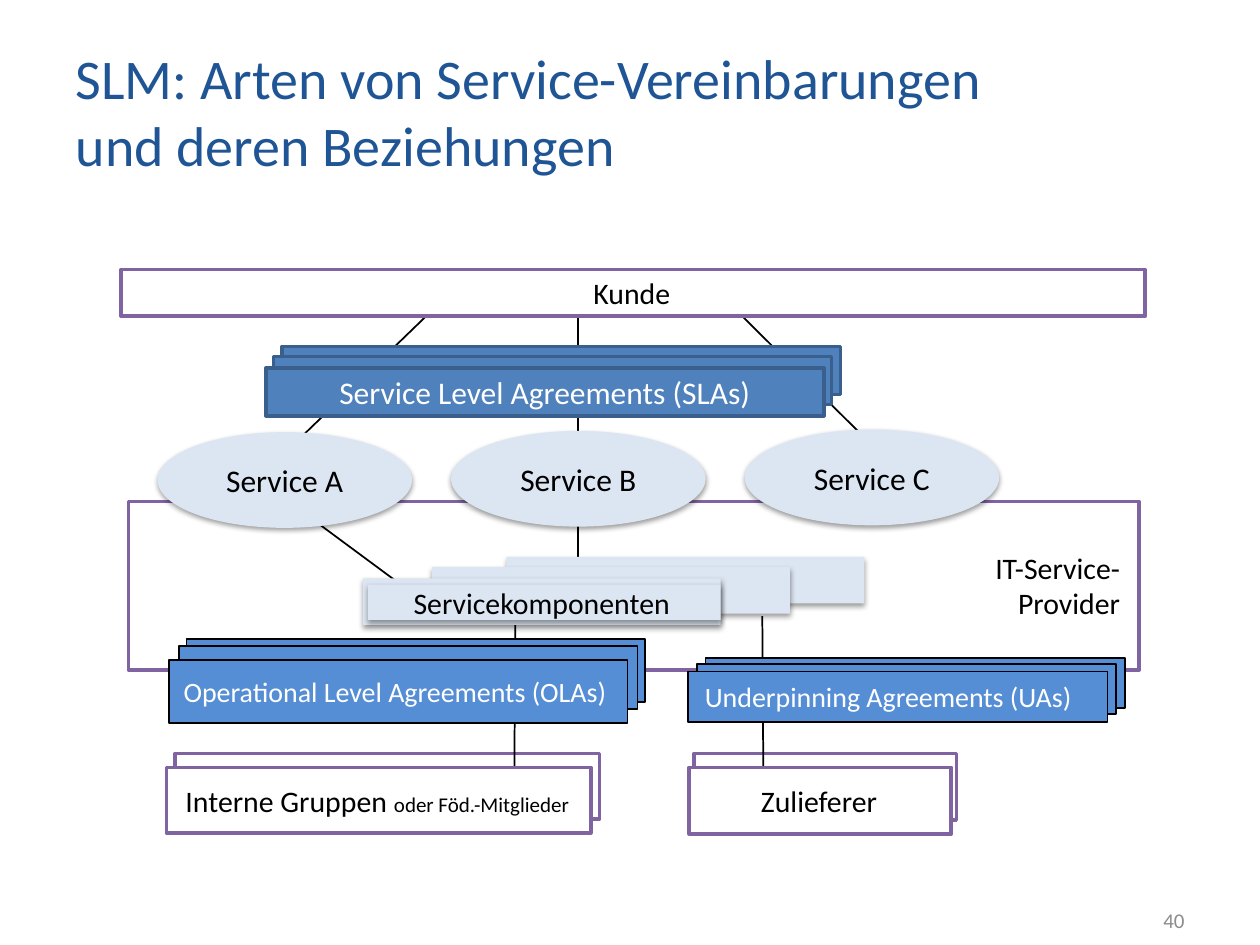
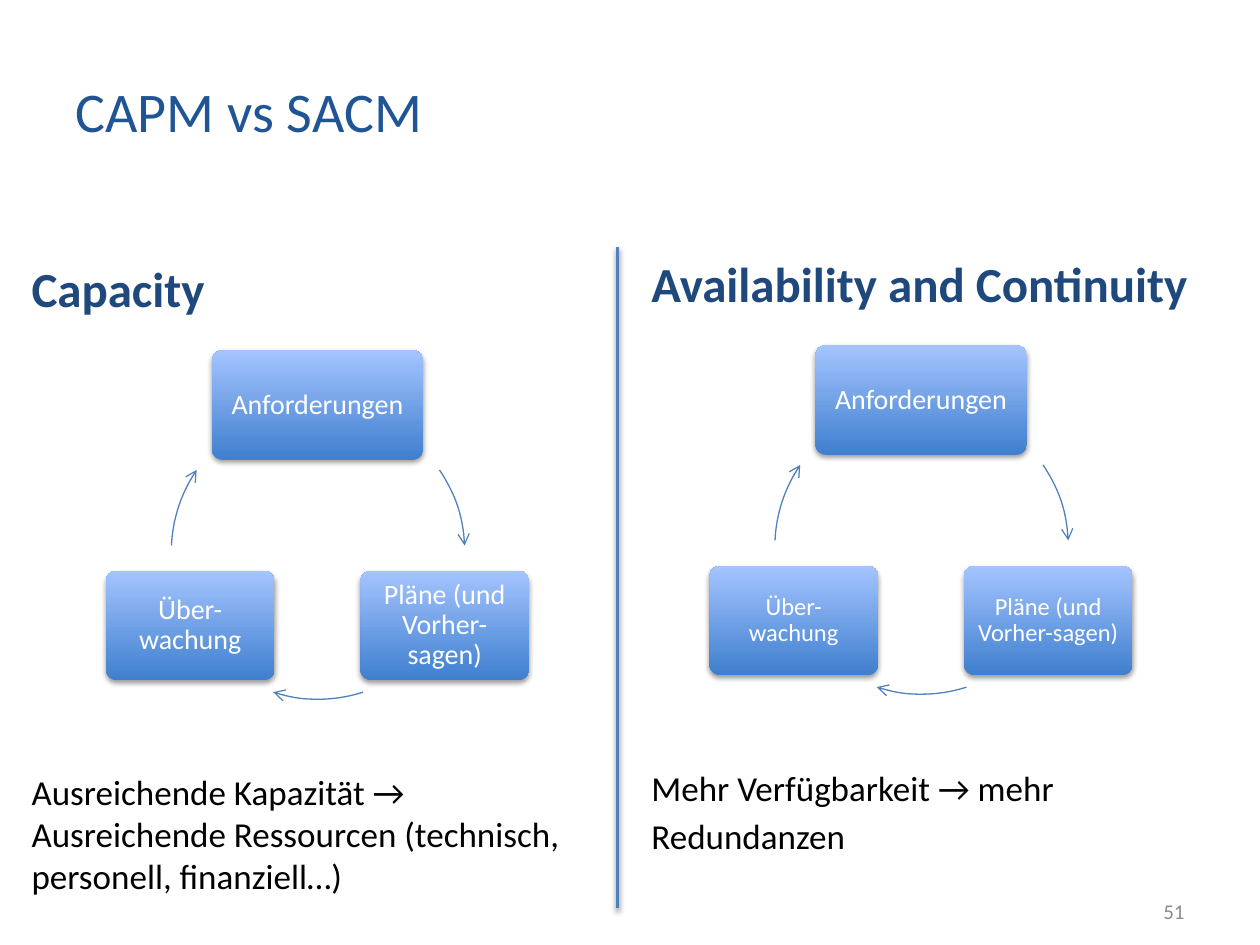
from dataclasses import dataclass, replace

from lxml import etree
from pptx import Presentation
from pptx.dml.color import RGBColor
from pptx.enum import shapes, text
from pptx.oxml.ns import qn
from pptx.util import Inches, Pt

FONT = "Calibri"
BLACK, WHITE, GREY = "000000", "FFFFFF", "8C8C8C"
TITLE_BLUE, HEADING_BLUE, BLUE = "205595", "1F497D", "4F81BD"
ALIGN, ANCHOR, SHAPE = text.PP_ALIGN, text.MSO_ANCHOR, shapes.MSO_SHAPE


@dataclass(frozen=True)
class Style:
    fill: str
    line: str = ""
    line_width: float = 2
    ink: str = BLACK
    shadow: bool = False


PARTY = Style(WHITE, "8064A2")
SLA = Style(BLUE, "3A5F8C", ink=WHITE)
AGREEMENT = Style("558ED5", BLACK, 1, ink=WHITE)
SERVICE = Style("DCE6F2", shadow=True)


@dataclass(frozen=True)
class Card:
    left: float
    top: float
    width: float
    height: float
    style: Style
    label: str = ""
    size: float = 17
    note: str = ""
    right_inset: float = 0.02
    kind: SHAPE = SHAPE.RECTANGLE


@dataclass(frozen=True)
class Cycle:
    left: float
    top: float
    step_size: float


@dataclass(frozen=True)
class Column:
    left: float
    top: float
    width: float
    height: float
    heading: str
    statement: str
    gap: float
    line_spacing: float


def colour(value: str) -> RGBColor:
    return RGBColor.from_string(value)


def place(shape, left: float, top: float, width: float, height: float) -> None:
    shape.left, shape.top = Inches(left), Inches(top)
    shape.width, shape.height = Inches(width), Inches(height)


def set_font(font, size: float, ink: str, bold: bool = False) -> None:
    font.name, font.size, font.bold = FONT, Pt(size), bold
    font.color.rgb = colour(ink)


def set_frame(frame, anchor, left: float, top: float, right: float, bottom: float) -> None:
    frame.word_wrap = True
    frame.auto_size = text.MSO_AUTO_SIZE.NONE
    frame.vertical_anchor = anchor
    frame.margin_left, frame.margin_top = Inches(left), Inches(top)
    frame.margin_right, frame.margin_bottom = Inches(right), Inches(bottom)


def set_effects(shape, shadow: bool = False) -> None:
    """Replace the theme shadow by a soft one below, or by none; call after fill and line."""
    effects = etree.SubElement(shape._element.spPr, qn("a:effectLst"))
    if shadow:
        outer = etree.SubElement(effects, qn("a:outerShdw"), blurRad=str(Pt(3.1)),
                                 dist=str(Pt(1.6)), dir="5400000", rotWithShape="0")
        ink = etree.SubElement(outer, qn("a:srgbClr"), val=BLACK)
        etree.SubElement(ink, qn("a:alpha"), val="38000")


def add_label(page, words: str, left: float, top: float, width: float, height: float,
              size: float, ink: str, inset: float) -> None:
    """Add right-aligned text without a frame."""
    box = page.shapes.add_textbox(Inches(left), Inches(top), Inches(width), Inches(height))
    set_frame(box.text_frame, ANCHOR.MIDDLE, inset, 0, inset, 0)
    para = box.text_frame.paragraphs[0]
    para.text, para.alignment = words, ALIGN.RIGHT
    set_font(para.font, size, ink)


def add_page(deck, layout: int, title: str, number: str, number_top: float):
    page = deck.slides.add_slide(deck.slide_layouts[layout])
    heading = page.shapes.title
    place(heading, 0.5, 0.3, 7.72, 1.15)
    set_frame(heading.text_frame, ANCHOR.MIDDLE, 0.1, 0.05, 0.1, 0.05)
    para = heading.text_frame.paragraphs[0]
    para.text, para.alignment = title, ALIGN.LEFT
    set_font(para.font, 32, TITLE_BLUE)
    add_label(page, number, 7.17, number_top, 2.33, 0.4, 12, GREY, 0.1)
    return page


def add_line(page, start: tuple, end: tuple, ink: str = BLACK, width: float = 1,
             shadow: bool = False) -> None:
    line = page.shapes.add_connector(shapes.MSO_CONNECTOR.STRAIGHT,
                                     *(Inches(value) for value in start + end))
    line.line.color.rgb, line.line.width = colour(ink), Pt(width)
    set_effects(line, shadow)


def add_card(page, card: Card) -> None:
    box = page.shapes.add_shape(card.kind, Inches(card.left), Inches(card.top),
                                Inches(card.width), Inches(card.height))
    style = card.style
    box.fill.solid()
    box.fill.fore_color.rgb = colour(style.fill)
    if style.line:
        box.line.color.rgb, box.line.width = colour(style.line), Pt(style.line_width)
    else:
        box.line.fill.background()
    set_effects(box, style.shadow)
    if card.label:
        set_frame(box.text_frame, ANCHOR.MIDDLE, 0, 0, card.right_inset, 0)
        para = box.text_frame.paragraphs[0]
        para.text, para.alignment = card.label, ALIGN.CENTER
        set_font(para.font, card.size, style.ink)
        if card.note:
            span = para.add_run()
            span.text, span.font.size = card.note, Pt(12)


def stack(front: Card, *behind: tuple) -> list[Card]:
    """Return blank cards at the places behind, then the front card."""
    blank = replace(front, label="", note="")
    return [replace(blank, left=left, top=top) for left, top in behind] + [front]


def service(name: str, left: float, top: float) -> Card:
    return Card(left, top, 2.02, 0.76, SERVICE, f"Service {name}", 18, right_inset=0,
                kind=SHAPE.OVAL)


def build_agreements(deck) -> None:
    page = add_page(deck, 5, "SLM: Arten von Service-Vereinbarungen und deren Beziehungen",
                    "40", 7.1)
    suppliers = stack(Card(5.47, 6.09, 2.08, 0.53, PARTY, "Zulieferer"), (5.51, 5.98))
    groups = stack(Card(1.32, 6.09, 3.37, 0.52, PARTY, "Interne Gruppen ",
                        note="oder Föd.-Mitglieder"), (1.39, 5.98))
    provider = Card(1.02, 3.98, 8.02, 1.34, PARTY)
    slas = stack(Card(2.11, 2.92, 4.43, 0.38, SLA, "Service Level Agreements (SLAs)", 18,
                      right_inset=0), (2.24, 2.75), (2.17, 2.83))
    olas = stack(Card(1.34, 5.24, 3.64, 0.5, AGREEMENT, "Operational Level Agreements (OLAs)",
                      16, right_inset=0.05), (1.48, 5.07), (1.42, 5.13))
    uas = stack(Card(5.46, 5.33, 3.33, 0.4, AGREEMENT, "Underpinning Agreements (UAs)",
                     16, right_inset=0.15), (5.6, 5.22), (5.53, 5.27))
    components = stack(Card(2.88, 4.59, 2.84, 0.37, SERVICE), (4.02, 4.42), (3.43, 4.5))
    component_label = Card(2.92, 4.64, 2.8, 0.28, SERVICE, "Servicekomponenten", right_inset=0.04)
    customer = Card(0.96, 2.14, 8.13, 0.37, PARTY, "Kunde")
    services = [service("A", 1.25, 3.43), service("B", 3.58, 3.42), service("C", 5.91, 3.41)]

    for card in (suppliers[0], groups[0], provider):
        add_card(page, card)
    for start, end in (
        ((4.59, 2.22), (4.59, 4.75)),
        ((3.64, 2.26), (2.1, 3.75)),
        ((5.67, 2.29), (7.12, 3.73)),
        ((6.05, 4.89), (6.06, 6.38)),
        ((4.09, 4.84), (4.08, 6.55)),
        ((2.1, 3.84), (3.56, 4.92)),
    ):
        add_line(page, start, end)
    for card in (*slas, groups[1], *olas, *components, component_label, customer,
                 suppliers[1], *uas, *services):
        add_card(page, card)
    add_label(page, "IT-Service-Provider", 7.74, 4.36, 1.19, 0.57, 17, BLACK, 0.04)


def add_step(page, label: str, left: float, top: float, width: float, size: float) -> None:
    box = page.shapes.add_shape(SHAPE.ROUNDED_RECTANGLE, Inches(left), Inches(top),
                                Inches(width), Inches(0.87))
    box.adjustments[0] = 0.1
    box.fill.gradient()
    box.fill.gradient_angle = 90
    for stop, ink in zip(box.fill.gradient_stops, ("3F7FCE", "A4C4FF")):
        stop.color.rgb = colour(ink)
    box.line.fill.background()
    set_effects(box, shadow=True)
    set_frame(box.text_frame, ANCHOR.MIDDLE, 0.08, 0.08, 0.08, 0.08)
    para = box.text_frame.paragraphs[0]
    para.text, para.alignment, para.line_spacing = label, ALIGN.CENTER, 0.9
    set_font(para.font, size, WHITE)


def add_arc_arrow(page, cycle: Cycle, start: float, end: float) -> None:
    """Draw a clockwise arrow on the cycle's ring between two angles in degrees."""
    arc = page.shapes.add_shape(SHAPE.ARC, Inches(cycle.left), Inches(cycle.top),
                                Inches(2.33), Inches(2.33))
    for index, degrees in enumerate((start, end)):
        arc.adjustments[index] = degrees * 0.6  # 60000 units a degree, scaled by 100000
    arc.fill.background()
    arc.line.color.rgb, arc.line.width = colour(BLUE), Pt(0.75)
    etree.SubElement(arc.line._get_or_add_ln(), qn("a:tailEnd"), type="arrow")
    set_effects(arc)


def add_cycle(page, cycle: Cycle) -> None:
    for label, left, top, width, size in (
        ("Anforderungen", 0.32, -0.44, 1.68, 16),
        ("Pläne (und Vorher-sagen)", 1.5, 1.31, 1.34, cycle.step_size),
        ("Über-wachung", -0.52, 1.31, 1.34, cycle.step_size),
    ):
        add_step(page, label, cycle.left + left, cycle.top + top, width, size)
    for start, end in ((325.8, 357.3), (72.2, 107.8), (182.7, 214.2)):
        add_arc_arrow(page, cycle, start, end)


def fill_column(body, column: Column) -> None:
    place(body, column.left, column.top, column.width, column.height)
    frame = body.text_frame
    set_frame(frame, ANCHOR.TOP, 0.1, 0.05, 0.1, 0.05)
    heading, statement = frame.paragraphs[0], frame.add_paragraph()
    heading.text, statement.text = column.heading, column.statement
    for para, gap in ((heading, 0), (statement, column.gap)):
        para.space_before = Pt(gap)
        properties = para._p.get_or_add_pPr()
        properties.set("marL", "0")
        properties.set("indent", "0")
        etree.SubElement(properties, qn("a:buNone"))
    statement.line_spacing = column.line_spacing
    set_font(heading.font, 28, HEADING_BLUE, bold=True)
    set_font(statement.font, 20, BLACK)


def build_comparison(deck) -> None:
    page = add_page(deck, 3, "CAPM vs SACM", "51", 7.03)
    add_line(page, (4.9, 1.96), (4.9, 7.21), BLUE, 2, shadow=True)
    columns = (
        Column(0.15, 2, 4.75, 5.22, "Capacity",
               "Ausreichende Kapazität → Ausreichende Ressourcen "
               "(technisch, personell, finanziell…)", 259, 1),
        Column(5.07, 1.96, 4.55, 4.95, "Availability and Continuity",
               "Mehr Verfügbarkeit → mehr Redundanzen", 256, 1.15),
    )
    for index, column in enumerate(columns, start=1):
        fill_column(page.placeholders[index], column)
    for cycle in (Cycle(1.36, 3.22, 16), Cycle(6.15, 3.18, 14)):
        add_cycle(page, cycle)


def main() -> None:
    deck = Presentation()
    deck.slide_width, deck.slide_height = Inches(10), Inches(7.5)
    build_agreements(deck)
    build_comparison(deck)
    deck.save("out.pptx")


if __name__ == "__main__":
    main()
